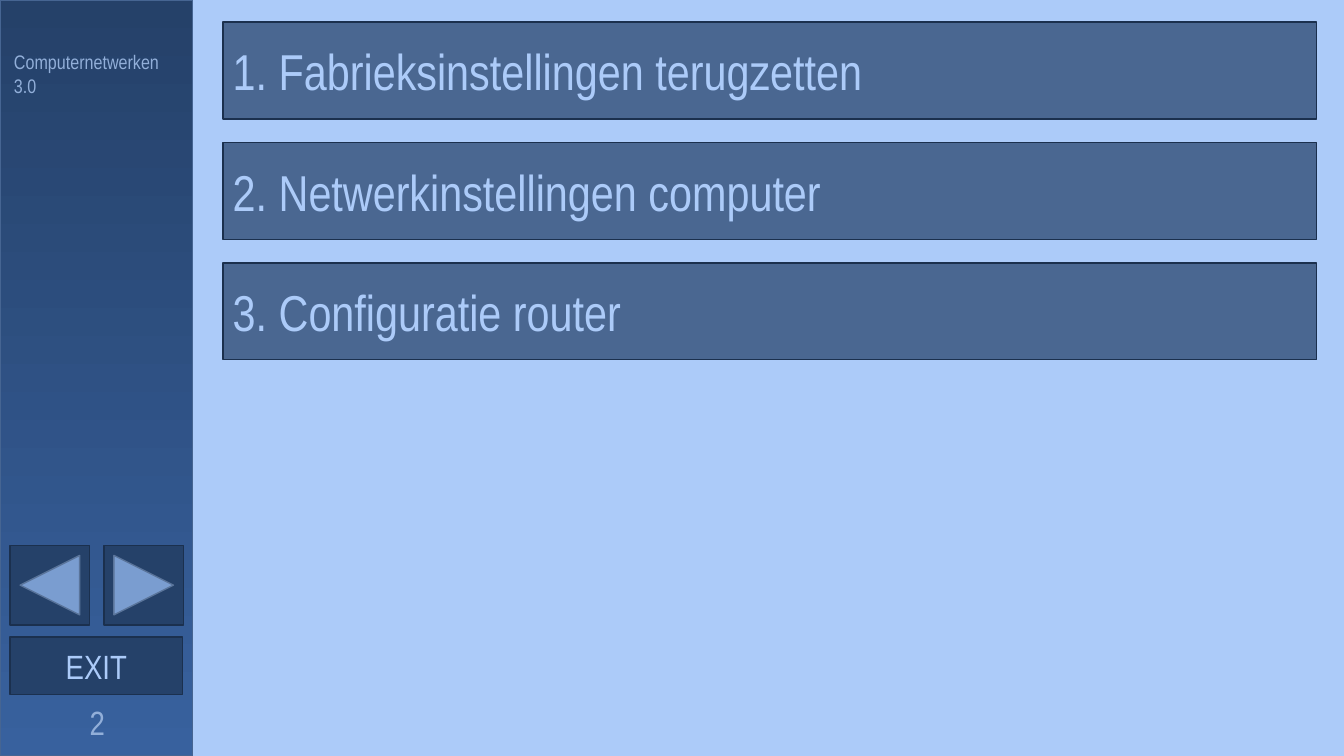
from dataclasses import dataclass

from lxml import etree
from pptx import Presentation
from pptx import util as u
from pptx.dml.color import RGBColor
from pptx.enum import shapes, text
from pptx.oxml.ns import qn


@dataclass(frozen=True)
class Theme:
    """Colours, font and type sizes of the slide."""

    font: str = "Arial Narrow"
    page: str = "ACCBF9"
    dark: str = "254169"
    sidebar_end: str = "38619E"
    sidebar_line: str = "466592"
    box_line: str = "1B304E"
    arrow: str = "7A9DD0"
    arrow_line: str = "5A749A"
    muted: str = "92AFD9"
    label_size: int = 14
    button_size: int = 24
    topic_size: int = 36


def write(frame, words, *, size, color, font, align=text.PP_ALIGN.LEFT,
          anchor=text.MSO_ANCHOR.MIDDLE):
    """Put formatted words in a text frame."""
    frame.word_wrap = True
    frame.vertical_anchor = anchor
    paragraph = frame.paragraphs[0]
    paragraph.alignment = align
    run = paragraph.add_run()
    run.text = words
    run.font.name = font
    run.font.size = u.Pt(size)
    run.font.color.rgb = RGBColor.from_string(color)


class SlideBuilder:
    """Draws styled elements on the current slide."""

    def __init__(self, slide, theme):
        """Keep the slide and theme and paint the background."""
        self.slide = slide
        self.theme = theme
        fill = slide.background.fill
        fill.solid()
        fill.fore_color.rgb = RGBColor.from_string(theme.page)

    def shape(self, box, fill, line, kind=shapes.MSO_SHAPE.RECTANGLE,
              rotation=0, opacity=100):
        """Add a filled and outlined preset shape."""
        item = self.slide.shapes.add_shape(kind, *map(u.Inches, box))
        item.shadow.inherit = False
        item.rotation = rotation
        item.fill.solid()
        item.fill.fore_color.rgb = RGBColor.from_string(fill)
        if opacity < 100:
            tint = item.fill._xPr.find(".//" + qn("a:srgbClr"))
            etree.SubElement(tint, qn("a:alpha"), val=str(opacity * 1000))
        item.line.color.rgb = RGBColor.from_string(line)
        item.line.width = u.Pt(1)
        return item

    def sidebar(self, box):
        """Add the panel that shades from dark to light downwards."""
        panel = self.shape(box, self.theme.dark, self.theme.sidebar_line)
        panel.fill.gradient()
        panel.fill.gradient_angle = 270
        colors = (self.theme.dark, self.theme.sidebar_end)
        for stop, position, color in zip(panel.fill.gradient_stops, (0, 1), colors):
            stop.position = position
            stop.color.rgb = RGBColor.from_string(color)

    def button(self, box, words=None, *, size=None, align=text.PP_ALIGN.LEFT,
               opacity=100):
        """Add a dark rectangle with optional words."""
        item = self.shape(box, self.theme.dark, self.theme.box_line, opacity=opacity)
        if words:
            write(item.text_frame, words, size=size, color=self.theme.page,
                  font=self.theme.font, align=align)

    def arrow_button(self, left, top, rotation):
        """Add a square button holding a turned triangle."""
        side, margin = 0.79, 0.1
        self.button((left, top, side, side))
        inner = side - 2 * margin
        self.shape((left + margin, top + margin, inner, inner), self.theme.arrow,
                   self.theme.arrow_line, shapes.MSO_SHAPE.ISOSCELES_TRIANGLE, rotation)

    def label(self, box, words, **style):
        """Add a text box in the muted colour."""
        item = self.slide.shapes.add_textbox(*map(u.Inches, box))
        write(item.text_frame, words, color=self.theme.muted,
              font=self.theme.font, **style)


def main():
    """Build and save the slide."""
    deck = Presentation()
    deck.slide_width, deck.slide_height = u.Inches(13.33), u.Inches(7.5)
    theme = Theme()
    page = SlideBuilder(deck.slides.add_slide(deck.slide_layouts[6]), theme)
    center = text.PP_ALIGN.CENTER

    page.sidebar((0, 0, 1.91, 7.5))
    for left, rotation in ((0.1, 270), (1.03, 90)):
        page.arrow_button(left, 5.41, rotation)
    page.button((0.1, 6.32, 1.71, 0.57), "EXIT", size=theme.button_size, align=center)
    page.label((0.04, 0.45, 1.88, 0.34), "Computernetwerken 3.0",
               size=theme.label_size, anchor=text.MSO_ANCHOR.TOP)
    page.label((0.11, 6.96, 1.71, 0.4), "2", size=theme.button_size, align=center)

    topics = ("Fabrieksinstellingen terugzetten", "Netwerkinstellingen computer",
              "Configuratie router")
    for row, topic in enumerate(topics):
        page.button((2.21, 0.22 + row * 1.195, 10.85, 0.96), f"{row + 1}. {topic}",
                    size=theme.topic_size, opacity=72)

    deck.save("out.pptx")


if __name__ == "__main__":
    main()
